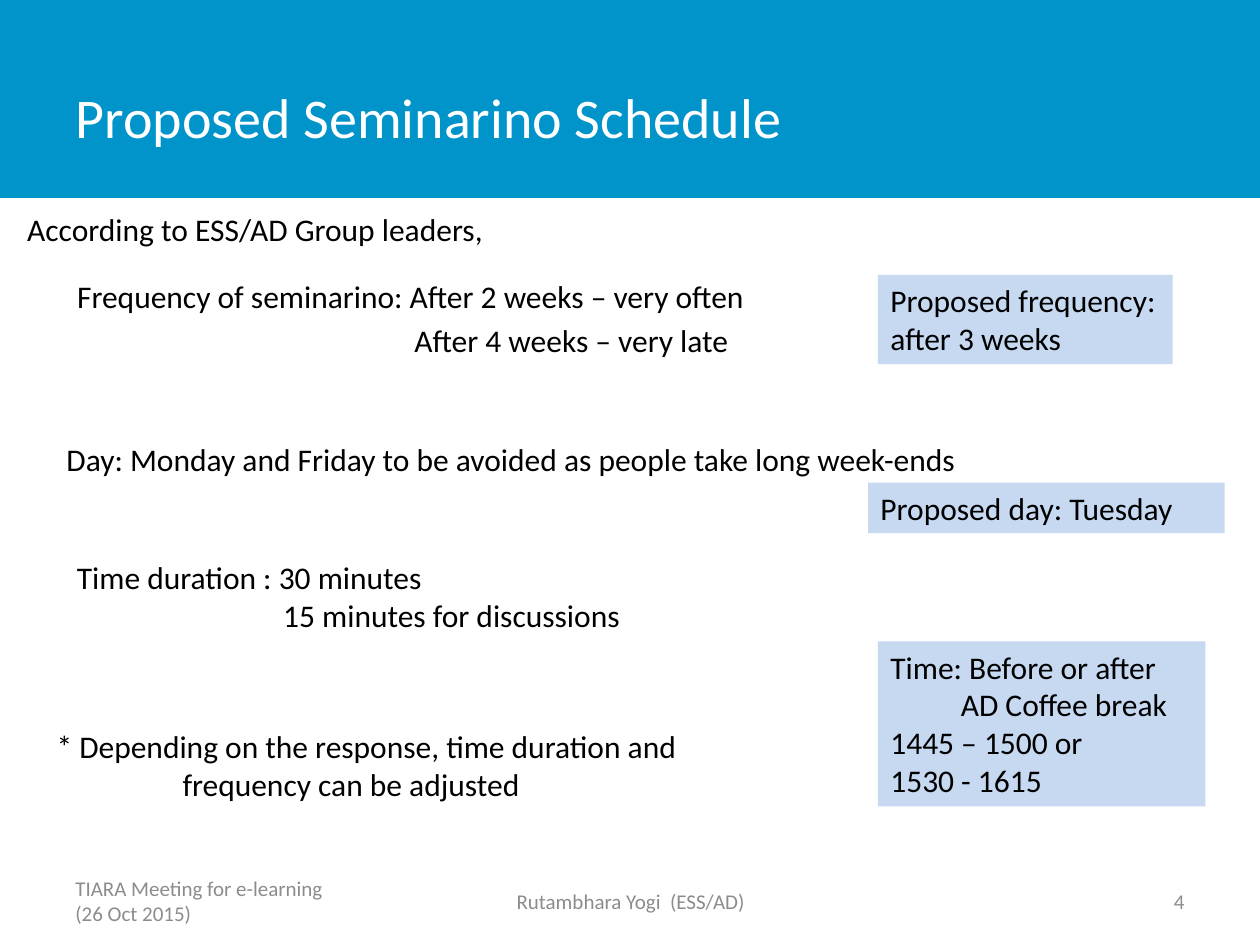
from pptx import Presentation
from pptx.dml.color import RGBColor
from pptx.enum.shapes import MSO_SHAPE
from pptx.enum.text import MSO_ANCHOR, MSO_AUTO_SIZE, PP_ALIGN
from pptx.oxml.ns import qn
from pptx.util import Cm, Pt
from lxml import etree

RECTANGLE = MSO_SHAPE.RECTANGLE
TOP, MIDDLE = MSO_ANCHOR.TOP, MSO_ANCHOR.MIDDLE
LEFT, CENTER, RIGHT = PP_ALIGN.LEFT, PP_ALIGN.CENTER, PP_ALIGN.RIGHT
NO_AUTOFIT = MSO_AUTO_SIZE.NONE


def color(value):
    return RGBColor.from_string(value)


class SlideBuilder:
    font = "Calibri"
    blue, pale, black, white, gray = "0094CA", "C6D9F1", "000000", "FFFFFF", "8C8C8C"

    def __init__(self, slide):
        self.slide = slide

    def place(self, shape, box):
        for name, length in zip(("left", "top", "width", "height"), box):
            setattr(shape, name, Cm(length))

    def set_lines(self, shape, lines, size=18, ink=black, align=LEFT, anchor=TOP, gap=0, wrap=True):
        frame = shape.text_frame
        frame_format = {"word_wrap": wrap, "auto_size": NO_AUTOFIT, "vertical_anchor": anchor}
        for name, value in frame_format.items():
            setattr(frame, name, value)
        for index, (text, indent) in enumerate(lines):
            paragraph = frame.add_paragraph() if index else frame.paragraphs[0]
            properties = paragraph._p.get_or_add_pPr()
            properties.set("marL", str(Cm(indent)))
            properties.set("indent", "0")
            etree.SubElement(properties, qn("a:buNone"))
            paragraph.alignment = align
            paragraph.space_before = Pt(gap if index else 0)
            run = paragraph.add_run()
            run.text = text
            for name, value in {"name": self.font, "size": Pt(size)}.items():
                setattr(run.font, name, value)
            run.font.color.rgb = color(ink)

    def placeholder(self, index, box, lines, **style):
        shape = self.slide.placeholders[index]
        self.place(shape, box)
        self.set_lines(shape, lines, **style)

    def text(self, box, lines, **style):
        self.set_lines(self.slide.shapes.add_textbox(*map(Cm, box)), lines, **style)

    def panel(self, box, fill):
        shape = self.slide.shapes.add_shape(RECTANGLE, *map(Cm, box))
        shape.shadow.inherit = False
        shape.fill.solid()
        shape.fill.fore_color.rgb = color(fill)
        shape.line.fill.background()
        return shape

    def banner(self, box):
        shape = self.panel(box, self.blue)
        self.slide.shapes.title.element.addprevious(shape.element)

    def proposal(self, box, lines, **style):
        self.set_lines(self.panel(box, self.pale), lines, **style)

    def footer(self, left, width, text, align):
        self.text((left, 17.65, width, 1.02), [(text, 0)],
                  size=12, ink=self.gray, align=align, anchor=MIDDLE)


def main():
    presentation = Presentation()
    presentation.slide_width, presentation.slide_height = Cm(25.4), Cm(19.05)
    schedule = SlideBuilder(presentation.slides.add_slide(presentation.slide_layouts[1]))

    schedule.banner((0, 0, 25.4, 3.99))
    schedule.placeholder(0, (1.27, 0.76, 19.84, 3.18), [("Proposed Seminarino Schedule", 0)],
                         size=32, ink=schedule.white, anchor=MIDDLE)
    schedule.placeholder(1, (1.3, 5.46, 22.86, 1.96), [
        ("Frequency of seminarino: After 2 weeks – very often", 0),
        ("After 4 weeks – very late", 6.8),
    ], gap=3.6)

    schedule.text((0.3, 4.11, 9.86, 1.02), [("According to ESS/AD Group leaders,", 0)], wrap=False)
    schedule.text((1.09, 8.74, 19.2, 1.02), [
        ("Day: Monday and Friday to be avoided as people take long week-ends", 0),
    ])
    schedule.text((1.3, 11.13, 11.58, 1.8), [
        ("Time duration : 30 minutes", 0),
        ("15 minutes for discussions", 4.16),
    ], wrap=False)
    schedule.text((0.89, 14.53, 14.2, 1.8), [
        ("* Depending on the response, time duration and", 0),
        ("frequency can be adjusted", 2.54),
    ])

    schedule.proposal((17.7, 5.54, 5.94, 1.8), [
        ("Proposed frequency:", 0),
        ("after 3 weeks", 0),
    ], wrap=False)
    schedule.proposal((17.5, 9.73, 7.19, 1.02), [("Proposed day: Tuesday", 0)])
    schedule.proposal((17.7, 12.93, 6.6, 3.33), [
        ("Time: Before or after", 0),
        ("AD Coffee break", 1.42),
        ("1445 – 1500 or", 0),
        ("1530 - 1615", 0),
    ])

    schedule.footer(1.27, 5.92, "TIARA Meeting for e-learning (26 Oct 2015)", LEFT)
    schedule.footer(8.69, 8.05, "Rutambhara Yogi  (ESS/AD)", CENTER)
    schedule.footer(18.21, 5.92, "4", RIGHT)
    presentation.save("out.pptx")


if __name__ == "__main__":
    main()
